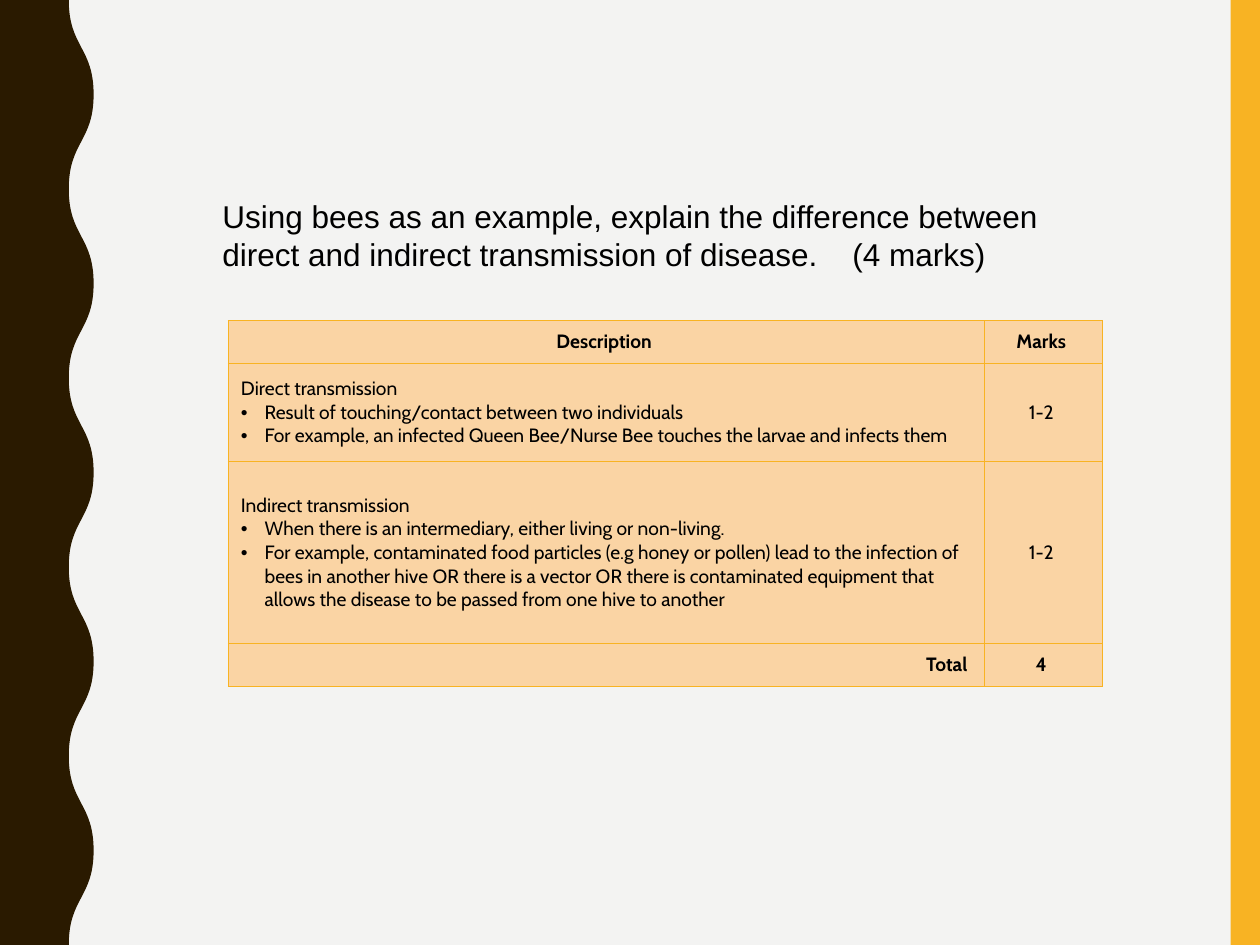
from lxml import etree
from pptx import Presentation
from pptx.dml.color import RGBColor
from pptx.enum.shapes import MSO_SHAPE
from pptx.enum.text import MSO_ANCHOR, PP_ALIGN
from pptx.oxml.ns import qn
from pptx.util import Pt

LEFT, CENTER, RIGHT = PP_ALIGN.LEFT, PP_ALIGN.CENTER, PP_ALIGN.RIGHT
MIDDLE = MSO_ANCHOR.MIDDLE
RECTANGLE = MSO_SHAPE.RECTANGLE

COLORS = {"background": "F3F3F2", "gold": "F8B323", "brown": "2A1A00",
          "cell": "FAD4A4", "text": "000000"}

# Each text ends with a no-break space, which sets it off from the cell edge
QUESTION = ("Using bees as an example, explain the difference between "
            "direct and indirect transmission of disease. \t(4 marks) ")

# (description lines, marks, description alignment, bold, row height);
# lines after the first are bullets
MARKING_ROWS = [
    (["Description "], "Marks ", CENTER, True, 24.5),
    (["Direct transmission ",
      "Result of touching/contact between two individuals ",
      "For example, an infected Queen Bee/Nurse Bee touches the larvae and infects them "],
     "1-2 ", LEFT, False, 56.2),
    (["Indirect transmission ",
      "When there is an intermediary, either living or non-living. ",
      "For example, contaminated food particles (e.g honey or pollen) lead to the "
      "infection of bees in another hive OR there is a vector OR there is contaminated "
      "equipment that allows the disease to be passed from one hive to another "],
     "1-2 ", LEFT, False, 104),
    (["Total "], "4 ", RIGHT, True, 24.5),
]
COLUMN_WIDTHS = [432, 67.5]

SLIDE_W, SLIDE_H = 720, 540
STRIPE_W = 16.8
WAVE_TROUGH, WAVE_CREST = 39.3, 53.5
HALF_WAVES = 10
BULLET_INDENT = 13.5


def rgb(name):
    return RGBColor.from_string(COLORS[name])


def paint(shape, color):
    shape.fill.solid()
    shape.fill.fore_color.rgb = rgb(color)
    shape.line.fill.background()
    shape.shadow.inherit = False


def style_font(paragraph, family, size, bold=False):
    font = paragraph.font
    font.name, font.size, font.bold = family, Pt(size), bold
    font.color.rgb = rgb("text")


def curve_wave(shape, knots):
    """Turn the straight segments between the knots into S-shaped Bezier curves."""
    segments = list(shape._element.iter(qn("a:lnTo")))
    for segment, (x0, y0), (x1, y1) in zip(segments, knots, knots[1:]):
        middle = (y0 + y1) // 2
        curve = etree.Element(qn("a:cubicBezTo"))
        for x, y in ((x0, middle), (x1, middle), (x1, y1)):
            etree.SubElement(curve, qn("a:pt"), x=str(x), y=str(y))
        segment.getparent().replace(segment, curve)


def add_bullet(paragraph):
    properties = paragraph._p.get_or_add_pPr()
    properties.set("marL", str(Pt(BULLET_INDENT)))
    properties.set("indent", str(-Pt(BULLET_INDENT)))
    etree.SubElement(properties, qn("a:buFont")).set("typeface", "Arial")
    etree.SubElement(properties, qn("a:buChar")).set("char", "•")


def add_borders(cell):
    properties = cell._tc.get_or_add_tcPr()
    for position, side in enumerate(("lnL", "lnR", "lnT", "lnB")):
        line = etree.Element(qn(f"a:{side}"), w=str(Pt(0.5)))
        fill = etree.SubElement(line, qn("a:solidFill"))
        etree.SubElement(fill, qn("a:srgbClr")).set("val", COLORS["gold"])
        properties.insert(position, line)


def fill_cell(cell, lines, alignment, bold):
    cell.fill.solid()
    cell.fill.fore_color.rgb = rgb("cell")
    cell.vertical_anchor = MIDDLE
    add_borders(cell)
    frame = cell.text_frame
    frame.text = "\n".join(lines)
    for index, paragraph in enumerate(frame.paragraphs):
        paragraph.alignment = alignment
        if index:
            add_bullet(paragraph)
        style_font(paragraph, "Cabin", 11, bold)


def add_edges(slide):
    stripe = slide.shapes.add_shape(RECTANGLE, Pt(SLIDE_W - STRIPE_W), 0,
                                    Pt(STRIPE_W), Pt(SLIDE_H))
    paint(stripe, "gold")
    knots = [(Pt(WAVE_CREST if index % 2 else WAVE_TROUGH), Pt(SLIDE_H * index / HALF_WAVES))
             for index in range(HALF_WAVES + 1)]
    builder = slide.shapes.build_freeform(*knots[0])
    builder.add_line_segments([*knots[1:], (0, Pt(SLIDE_H)), (0, 0)])
    wave = builder.convert_to_shape()
    curve_wave(wave, knots)
    paint(wave, "brown")


def add_question(slide):
    frame = slide.shapes.add_textbox(Pt(120), Pt(109.1), Pt(516), Pt(51)).text_frame
    frame.word_wrap = True
    frame.text = QUESTION
    style_font(frame.paragraphs[0], "Arial", 18)


def add_marking_table(slide):
    heights = [row[-1] for row in MARKING_ROWS]
    table = slide.shapes.add_table(len(MARKING_ROWS), len(COLUMN_WIDTHS), Pt(130.5), Pt(183.1),
                                   Pt(sum(COLUMN_WIDTHS)), Pt(sum(heights))).table
    for column, width in zip(table.columns, COLUMN_WIDTHS):
        column.width = Pt(width)
    for row, (lines, marks, alignment, bold, height) in zip(table.rows, MARKING_ROWS):
        row.height = Pt(height)
        fill_cell(row.cells[0], lines, alignment, bold)
        fill_cell(row.cells[1], [marks], CENTER, bold)


def main():
    presentation = Presentation()
    presentation.slide_width, presentation.slide_height = Pt(SLIDE_W), Pt(SLIDE_H)
    slide = presentation.slides.add_slide(presentation.slide_layouts[6])
    slide.background.fill.solid()
    slide.background.fill.fore_color.rgb = rgb("background")
    add_edges(slide)
    add_marking_table(slide)
    add_question(slide)
    presentation.save("out.pptx")


if __name__ == "__main__":
    main()
